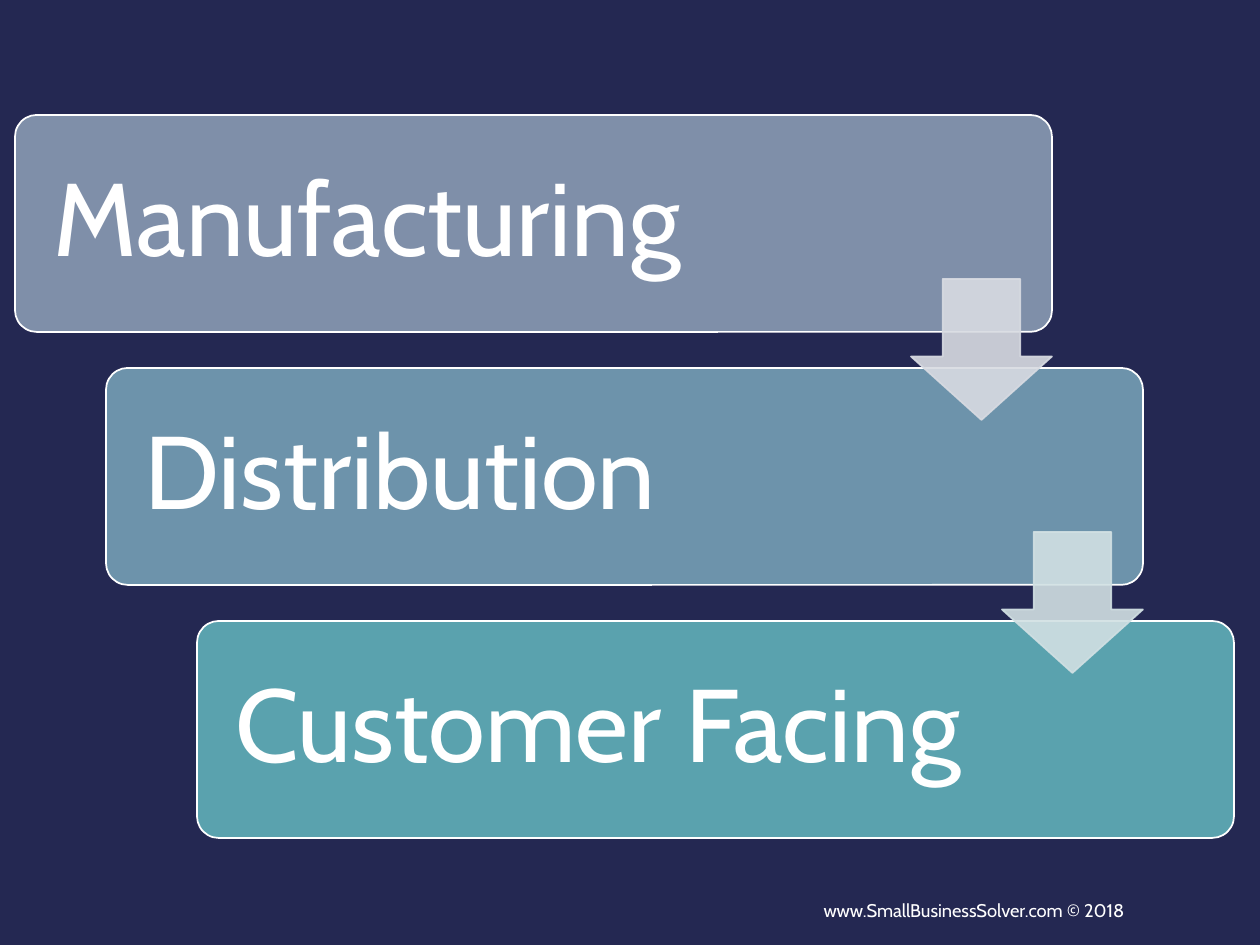
from dataclasses import dataclass

from lxml.etree import SubElement
from pptx import Presentation
from pptx.dml.color import RGBColor
from pptx.enum.shapes import MSO_SHAPE as SHAPE
from pptx.enum.text import MSO_ANCHOR as ANCHOR, PP_ALIGN as ALIGN
from pptx.oxml.ns import qn
from pptx.util import Emu, Pt

# Label, box colour, colour of the arrow to the next stage
STAGES = [
    ("Manufacturing", "7F8FA9", "D8DBE2"),
    ("Distribution", "6D93AB", "D1E0E3"),
    ("Customer Facing", "5AA2AE", None),
]
FOOTER = "www.SmallBusinessSolver.com © 2018"


@dataclass(frozen=True)
class Theme:
    font: str = "Cabin"
    background: str = "242852"
    white: str = "FFFFFF"
    stage_size: float = 59
    footer_size: float = 10.5
    line_width: float = 1
    arrow_opacity: int = 90


THEME = Theme()

# Layout in px, 126 to the inch
SLIDE_W, SLIDE_H = 1260, 945
BOX_X, BOX_Y, BOX_W, BOX_H = 15, 115, 1037, 217
STEP_X, STEP_Y = 91, 253
BOX_INSET = 32
ARROW, ARROW_DROP = 141, 164
FOOTER_BOX = (577, 885, 560, 50)


def px(n):
    return Emu(round(n * 914400 / 126))


def rgb(code):
    return RGBColor.from_string(code)


def set_opacity(fill_xml, percent):
    color = fill_xml.find(".//" + qn("a:srgbClr"))
    SubElement(color, qn("a:alpha"), val=str(percent * 1000))


def add_block(s, kind, box, adjustments, fill, line):
    sp = s.shapes.add_shape(kind, *map(px, box))
    for i, value in enumerate(adjustments):
        sp.adjustments[i] = value
    sp.shadow.inherit = False
    sp.fill.solid()
    sp.fill.fore_color.rgb = rgb(fill)
    sp.line.color.rgb = rgb(line)
    sp.line.width = Pt(THEME.line_width)
    return sp


def write(sp, text, size, align):
    tf = sp.text_frame
    tf.word_wrap = True
    tf.vertical_anchor = ANCHOR.MIDDLE
    p = tf.paragraphs[0]
    p.alignment = align
    r = p.add_run()
    r.text = text
    r.font.name = THEME.font
    r.font.size = Pt(size)
    r.font.color.rgb = rgb(THEME.white)
    return tf


def add_stage(s, x, y, label, color):
    sp = add_block(s, SHAPE.ROUNDED_RECTANGLE, (x, y, BOX_W, BOX_H), [0.1],
                   color, THEME.white)
    tf = write(sp, label, THEME.stage_size, ALIGN.LEFT)
    tf.paragraphs[0].line_spacing = 0.9
    tf.margin_left = tf.margin_right = px(BOX_INSET)
    tf.margin_top = tf.margin_bottom = px(BOX_INSET)


def add_arrow(s, x, y, color):
    """Place an arrow flush with the right side of the stage box at x, y."""
    box = (x + BOX_W - ARROW, y + ARROW_DROP, ARROW, ARROW)
    sp = add_block(s, SHAPE.DOWN_ARROW, box, [0.55, 0.45], color, color)
    sp_pr = sp.fill._xPr
    for tag in ("a:solidFill", "a:ln"):
        set_opacity(sp_pr.find(qn(tag)), THEME.arrow_opacity)


def main():
    prs = Presentation()
    prs.slide_width, prs.slide_height = px(SLIDE_W), px(SLIDE_H)
    s = prs.slides.add_slide(prs.slide_layouts[6])
    s.background.fill.solid()
    s.background.fill.fore_color.rgb = rgb(THEME.background)

    places = [(BOX_X + i * STEP_X, BOX_Y + i * STEP_Y)
              for i in range(len(STAGES))]
    for (x, y), (label, color, _) in zip(places, STAGES):
        add_stage(s, x, y, label, color)
    for (x, y), (_, _, arrow_color) in zip(places, STAGES):
        if arrow_color:
            add_arrow(s, x, y, arrow_color)

    footer = s.shapes.add_textbox(*map(px, FOOTER_BOX))
    write(footer, FOOTER, THEME.footer_size, ALIGN.RIGHT)
    prs.save("out.pptx")


if __name__ == "__main__":
    main()
